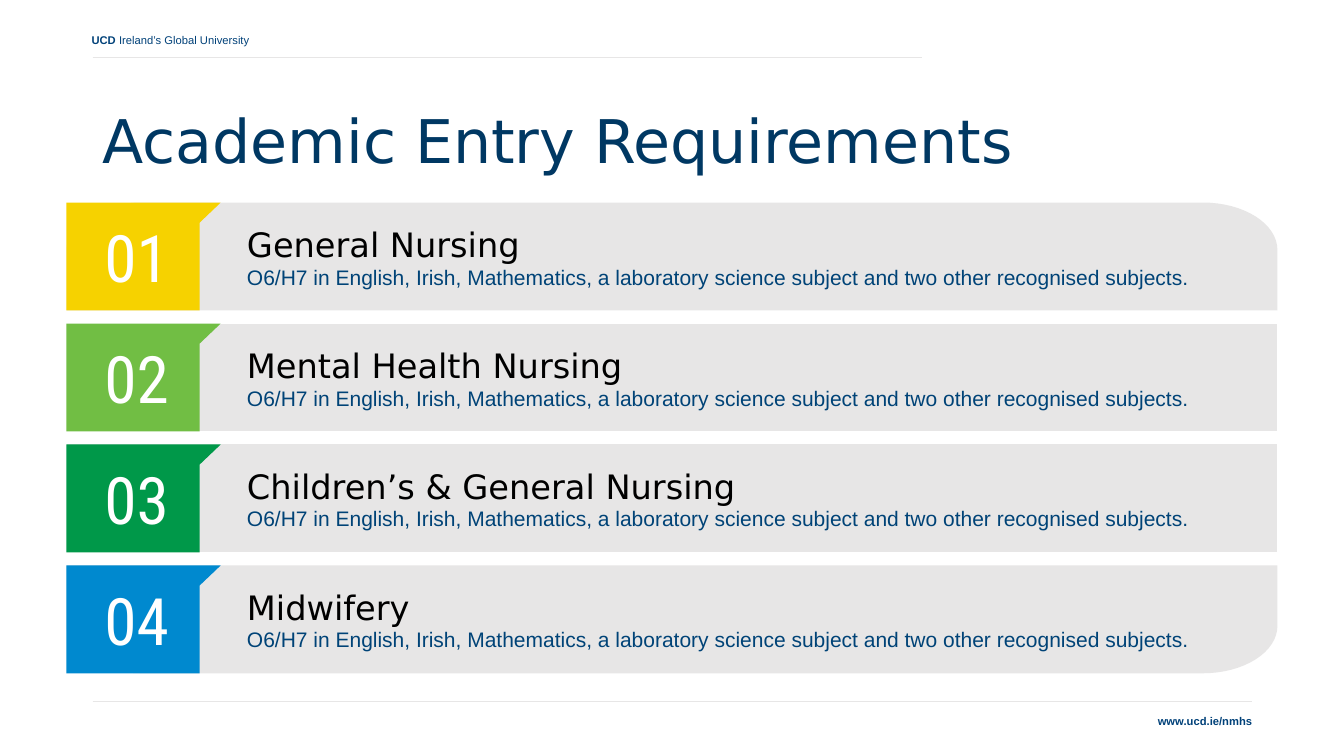
import math

from lxml import etree
from pptx import Presentation
from pptx.dml.color import RGBColor
from pptx.enum.shapes import MSO_CONNECTOR
from pptx.enum.text import MSO_ANCHOR, PP_ALIGN
from pptx.oxml.ns import qn
from pptx.util import Inches, Pt

LEFT, CENTER, RIGHT = PP_ALIGN.LEFT, PP_ALIGN.CENTER, PP_ALIGN.RIGHT
MIDDLE = MSO_ANCHOR.MIDDLE
STRAIGHT = MSO_CONNECTOR.STRAIGHT

WHITE = RGBColor(0xFF, 0xFF, 0xFF)
BLACK = RGBColor(0x00, 0x00, 0x00)
GREY = RGBColor(0xE7, 0xE6, 0xE6)
BRAND_BLUE = RGBColor(0x00, 0x41, 0x79)
BODY_BLUE = RGBColor(0x00, 0x43, 0x77)
TITLE_BLUE = RGBColor(0x00, 0x38, 0x63)
YELLOW = RGBColor(0xF6, 0xD2, 0x00)
LIME = RGBColor(0x71, 0xBE, 0x44)
GREEN = RGBColor(0x00, 0x98, 0x49)
BLUE = RGBColor(0x00, 0x89, 0xCF)

TITLE = "Academic Entry Requirements"
REQUIREMENT = (
    "O6/H7 in English, Irish, Mathematics, a laboratory science subject "
    "and two other recognised subjects."
)
PROGRAMMES = [
    ("01", "General Nursing", YELLOW),
    ("02", "Mental Health Nursing", LIME),
    ("03", "Children’s & General Nursing", GREEN),
    ("04", "Midwifery", BLUE),
]
RULES = [(0.92, 9.14, 0.57), (0.92, 12.42, 6.96)]

STRONG = {"name": "Arial", "size": Pt(8), "bold": True, "color": BRAND_BLUE}
SMALL = {**STRONG, "bold": False}
HEADLINE = {"name": "DejaVu Sans", "size": Pt(43), "color": TITLE_BLUE}
NUMBER = {"name": "Roboto Condensed", "size": Pt(46.7), "color": WHITE}
HEADING = {"name": "DejaVu Sans", "size": Pt(24), "color": BLACK}
DETAIL = {"name": "Arial", "size": Pt(15), "color": BODY_BLUE}

BAND_LEFT, BAND_RIGHT = 0.66, 12.67
ROW_TOP, ROW_PITCH, ROW_HEIGHT = 2.01, 1.2, 1.07
CORNER_WIDTH, CORNER_HEIGHT, CORNER_STEPS = 0.74, 0.47, 16
TAB_RIGHT, FLAP_RIGHT, FLAP_DROP = 1.98, 2.19, 0.2
TEXT_LEFT, TEXT_WIDTH = 2.32, 10.2
TAB_INSETS = (0.13, 0.13, 0.27, 0.13)
TEXT_INSETS = (0.13, 0.13, 0.13, 0.13)
DEFAULT_INSETS = (0.1, 0.05, 0.1, 0.05)


def write(shape, paragraphs, align=LEFT, insets=DEFAULT_INSETS):
    frame = shape.text_frame
    frame.word_wrap = True
    frame.vertical_anchor = MIDDLE
    for side, inset in zip(("left", "top", "right", "bottom"), insets):
        setattr(frame, f"margin_{side}", Inches(inset))
    for index, spans in enumerate(paragraphs):
        para = frame.add_paragraph() if index else frame.paragraphs[0]
        para.alignment = align
        for text, style in spans:
            span = para.add_run()
            span.text = text
            for key, value in style.items():
                if key == "color":
                    span.font.color.rgb = value
                else:
                    setattr(span.font, key, value)
    return frame


def add_text(page, place, paragraphs, align=LEFT, insets=DEFAULT_INSETS):
    box = page.shapes.add_textbox(*map(Inches, place))
    return write(box, paragraphs, align, insets)


def add_outline(page, points, color):
    corners = [(Inches(x), Inches(y)) for x, y in points]
    builder = page.shapes.build_freeform(*corners[0])
    builder.add_line_segments(corners[1:], close=True)
    shape = builder.convert_to_shape()
    shape.shadow.inherit = False
    shape.fill.solid()
    shape.fill.fore_color.rgb = color
    shape.line.fill.background()
    return shape


def band_points(top, round_top, round_bottom):
    bottom = top + ROW_HEIGHT
    corners = [
        (BAND_LEFT, top, 1, 1, 180, round_top),
        (BAND_RIGHT, top, -1, 1, 270, round_top),
        (BAND_RIGHT, bottom, -1, -1, 0, round_bottom),
        (BAND_LEFT, bottom, 1, -1, 90, round_bottom),
    ]
    points = []
    for x, y, inward_x, inward_y, start, rounded in corners:
        if not rounded:
            points.append((x, y))
            continue
        center_x = x + inward_x * CORNER_WIDTH
        center_y = y + inward_y * CORNER_HEIGHT
        for step in range(CORNER_STEPS + 1):
            angle = math.radians(start + 90 * step / CORNER_STEPS)
            points.append((center_x + CORNER_WIDTH * math.cos(angle),
                           center_y + CORNER_HEIGHT * math.sin(angle)))
    return points


def tab_points(top):
    bottom = top + ROW_HEIGHT
    return [(BAND_LEFT, top), (BAND_LEFT, bottom), (TAB_RIGHT, bottom),
            (TAB_RIGHT, top + FLAP_DROP), (FLAP_RIGHT, top)]


def add_rule(page, left, right, y):
    rule = page.shapes.add_connector(
        STRAIGHT, Inches(left), Inches(y), Inches(right), Inches(y))
    rule.line.color.rgb = GREY
    rule.line.width = Pt(0.5)
    etree.SubElement(rule.element.spPr, qn("a:effectLst"))


def main():
    deck = Presentation()
    deck.slide_width, deck.slide_height = Inches(13.33), Inches(7.5)
    page = deck.slides.add_slide(deck.slide_layouts[6])

    add_text(page, (0.81, 0.2, 4.5, 0.4),
             [[("UCD", STRONG), (" Ireland’s Global University", SMALL)]])
    add_text(page, (8.02, 6.95, 4.5, 0.4), [[("www.ucd.ie/nmhs", STRONG)]], RIGHT)
    for left, right, y in RULES:
        add_rule(page, left, right, y)

    last = len(PROGRAMMES) - 1
    for index, (number, name, color) in enumerate(PROGRAMMES):
        top = ROW_TOP + index * ROW_PITCH
        add_outline(page, band_points(top, index == 0, index == last), GREY)
        tab = add_outline(page, tab_points(top), color)
        write(tab, [[(number, NUMBER)]], CENTER, TAB_INSETS)
        add_text(page, (TEXT_LEFT, top, TEXT_WIDTH, ROW_HEIGHT),
                 [[(name, HEADING)], [(REQUIREMENT, DETAIL)]], insets=TEXT_INSETS)

    title = add_text(page, (0.92, 0.7, 11.5, 1.45), [[(TITLE, HEADLINE)]])
    title.paragraphs[0].line_spacing = 0.9
    deck.save("out.pptx")


if __name__ == "__main__":
    main()
